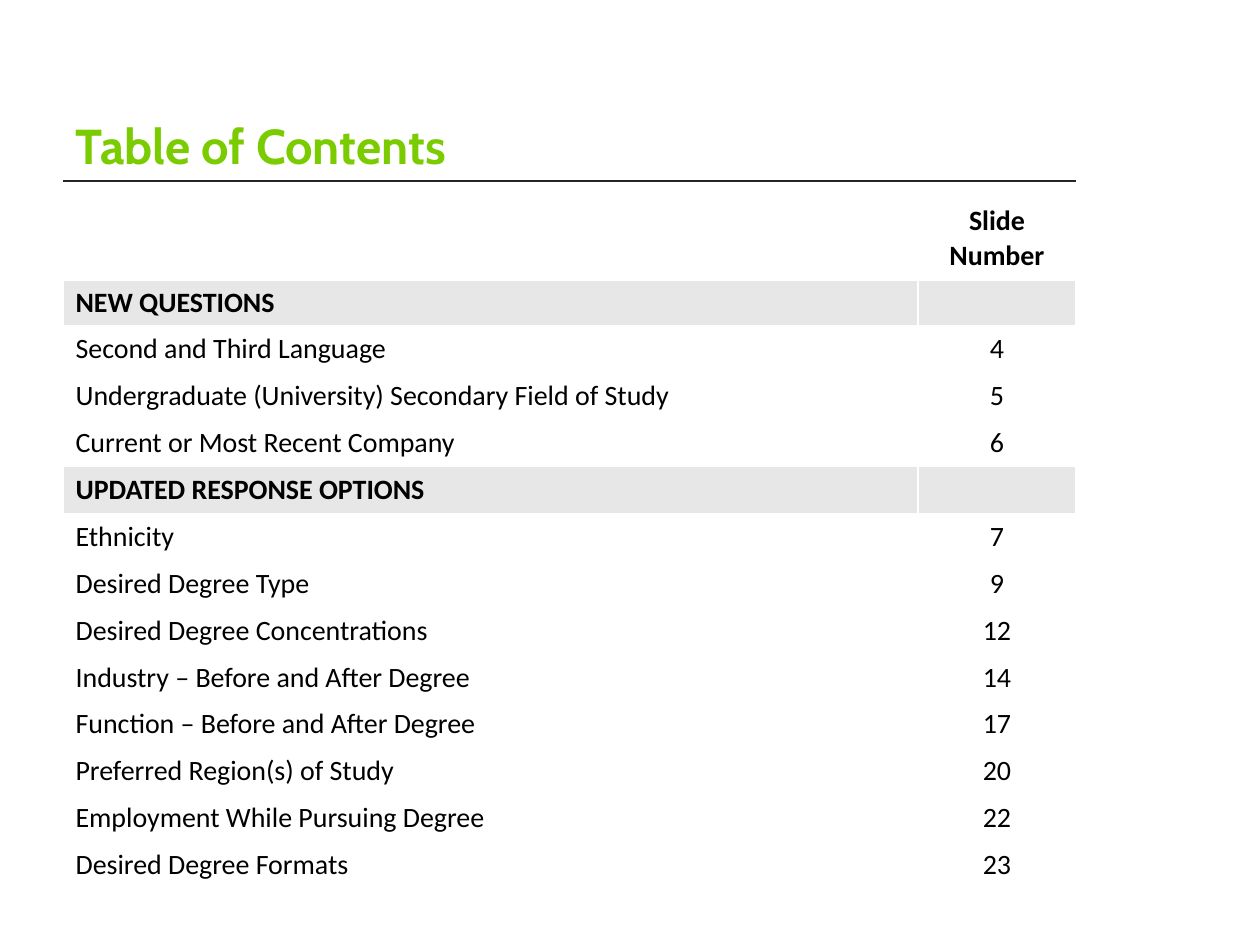
from typing import NamedTuple

from lxml.etree import SubElement
from pptx import Presentation
from pptx.dml.color import RGBColor
from pptx.enum.shapes import MSO_CONNECTOR
from pptx.enum.text import MSO_ANCHOR, MSO_AUTO_SIZE, PP_ALIGN
from pptx.oxml.ns import qn
from pptx.util import Emu, Pt

SCALE = 914400 / 126
GREEN = RGBColor(0x7A, 0xCC, 0x00)
BLACK = RGBColor(0x00, 0x00, 0x00)
RULE = RGBColor(0x26, 0x26, 0x26)
BAND = RGBColor(0xE7, 0xE7, 0xE7)
WHITE = RGBColor(0xFF, 0xFF, 0xFF)

LEFT, WIDTH = 63, 1013
RULE_Y, TABLE_Y = 181, 198
COLUMNS = (855, 158)
HEADER_H, ROW_H = 72, 45


class Entry(NamedTuple):
    topic: str
    number: str = ""
    heading: bool = False


ENTRIES = (
    Entry("NEW QUESTIONS", heading=True),
    Entry("Second and Third Language", "4"),
    Entry("Undergraduate (University) Secondary Field of Study", "5"),
    Entry("Current or Most Recent Company", "6"),
    Entry("UPDATED RESPONSE OPTIONS", heading=True),
    Entry("Ethnicity", "7"),
    Entry("Desired Degree Type", "9"),
    Entry("Desired Degree Concentrations", "12"),
    Entry("Industry – Before and After Degree", "14"),
    Entry("Function – Before and After Degree", "17"),
    Entry("Preferred Region(s) of Study", "20"),
    Entry("Employment While Pursuing Degree", "22"),
    Entry("Desired Degree Formats", "23"),
)


def px(n: int) -> Emu:
    return Emu(round(n * SCALE))


def write(p, text: str, color: RGBColor, **fmt) -> None:
    r = p.add_run()
    r.text = text
    for name, value in fmt.items():
        setattr(r.font, name, value)
    r.font.color.rgb = color


def add_title(slide, text: str) -> None:
    sp = slide.shapes.title
    sp.left, sp.top, sp.width, sp.height = px(LEFT), px(44), px(WIDTH), px(137)
    tf = sp.text_frame
    tf.auto_size = MSO_AUTO_SIZE.NONE
    tf.vertical_anchor = MSO_ANCHOR.BOTTOM
    p = tf.paragraphs[0]
    p.alignment = PP_ALIGN.LEFT
    p.line_spacing = Pt(36)
    write(p, text, GREEN, name="Cabin", size=Pt(28), bold=True)


def add_rule(slide) -> None:
    line = slide.shapes.add_connector(
        MSO_CONNECTOR.STRAIGHT, px(LEFT), px(RULE_Y), px(LEFT + WIDTH), px(RULE_Y))
    line.line.color.rgb = RULE
    line.line.width = Pt(1.5)
    SubElement(line._element.spPr, qn("a:effectLst"))


def set_borders(cell, bottom: int) -> None:
    """Draw white borders, 1 pt except for the given bottom width."""
    tc_pr = cell._tc.get_or_add_tcPr()
    for side, points in {"L": 1, "R": 1, "T": 1, "B": bottom}.items():
        ln = SubElement(tc_pr, qn(f"a:ln{side}"), w=str(Pt(points)))
        fill = SubElement(ln, qn("a:solidFill"))
        SubElement(fill, qn("a:srgbClr"), val=str(WHITE))


def fill_cell(cell, text: str, bold: bool, centered: bool, shaded: bool, bottom: int) -> None:
    set_borders(cell, bottom)
    if shaded:
        cell.fill.solid()
        cell.fill.fore_color.rgb = BAND
    else:
        cell.fill.background()
    p = cell.text_frame.paragraphs[0]
    p.alignment = PP_ALIGN.CENTER if centered else PP_ALIGN.LEFT
    if text:
        write(p, text, BLACK, name="Calibri", size=Pt(16), bold=bold)
    else:
        SubElement(p._p, qn("a:endParaRPr"), sz="1600")


def add_contents(slide) -> None:
    rows = (Entry("", "Slide Number"), *ENTRIES)
    height = HEADER_H + ROW_H * len(ENTRIES)
    table = slide.shapes.add_table(
        len(rows), len(COLUMNS), px(LEFT), px(TABLE_Y), px(WIDTH), px(height)).table
    table.first_row = table.horz_banding = False
    for column, width in zip(table.columns, COLUMNS):
        column.width = px(width)
    for i, entry in enumerate(rows):
        header = i == 0
        table.rows[i].height = px(HEADER_H if header else ROW_H)
        for j, text in enumerate((entry.topic, entry.number)):
            fill_cell(table.cell(i, j), text, bold=header or entry.heading,
                      centered=j == 1, shaded=entry.heading, bottom=3 if header else 1)


def main() -> None:
    prs = Presentation()
    prs.slide_width, prs.slide_height = px(1260), px(945)
    slide = prs.slides.add_slide(prs.slide_layouts[5])
    add_rule(slide)
    add_title(slide, "Table of Contents")
    add_contents(slide)
    prs.save("out.pptx")


if __name__ == "__main__":
    main()
